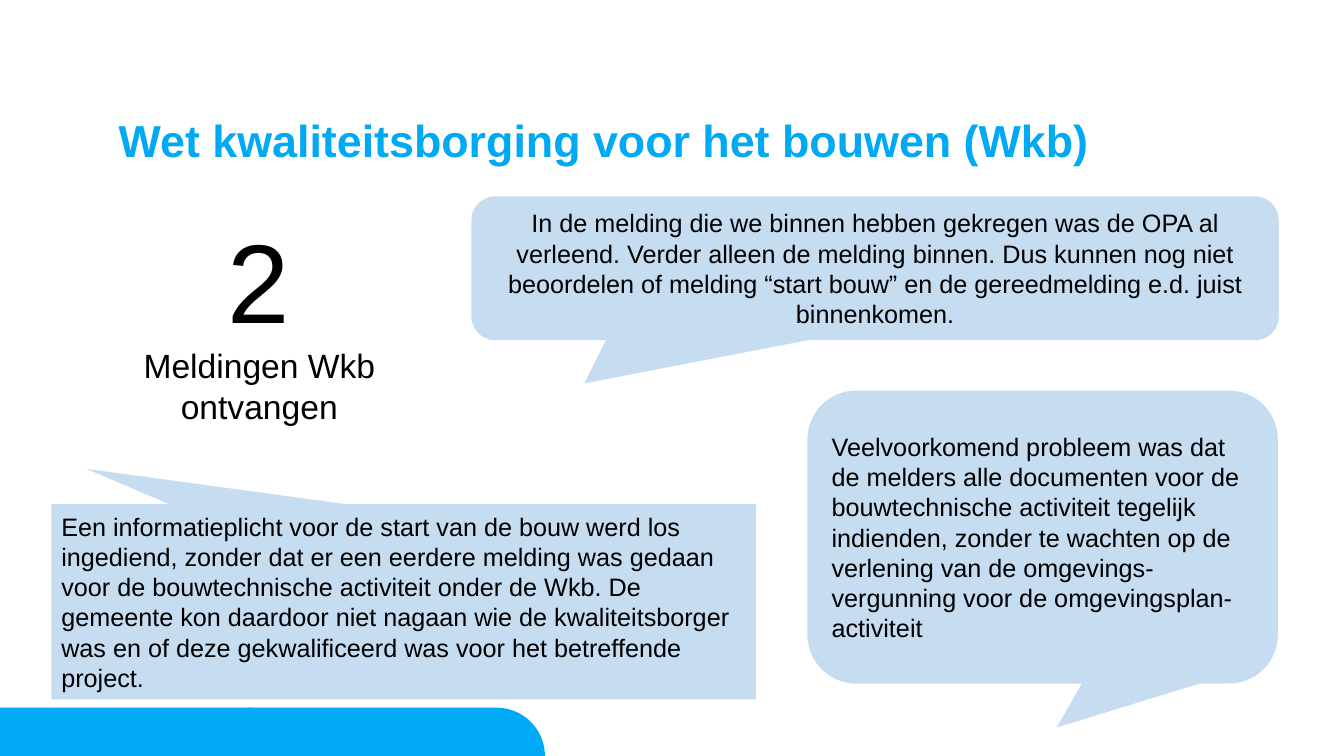
import math
import lxml.etree
import pptx
import pptx.dml.color
import pptx.enum.shapes
import pptx.enum.text
import pptx.oxml.ns
import pptx.util

PX = 9525
KIND = pptx.enum.shapes.MSO_SHAPE
LEFT = pptx.enum.text.PP_ALIGN.LEFT
MID = pptx.enum.text.PP_ALIGN.CENTER
ANCHOR = pptx.enum.text.MSO_ANCHOR


class Theme:
    font = "Arial"
    blue = pptx.dml.color.RGBColor.from_string("00A9F3")
    pale = pptx.dml.color.RGBColor.from_string("8EBAE5")
    ink = pptx.dml.color.RGBColor.from_string("000000")
    alpha = 50
    title = 32
    count = 80
    label = 24
    body = 18


def scale(*box):
    return [round(n * PX) for n in box]


def write(para, text, size, color, align=LEFT, bold=False):
    para.alignment = align
    run = para.add_run()
    run.text = text
    run.font.name = Theme.font
    run.font.size = pptx.util.Pt(size)
    run.font.color.rgb = color
    run.font.bold = bold


def add_foot(slide, box):
    left, top, width, height = box
    arc = []
    for step in range(25):
        turn = math.pi / 2 * step / 24
        arc.append(scale(left + width - height + height * math.sin(turn),
                         top + height - height * math.cos(turn)))
    start = scale(left, top + height)
    path = slide.shapes.build_freeform(*start, scale=1.0)
    path.add_line_segments([scale(left, top), *arc], close=True)
    foot = path.convert_to_shape()
    foot.shadow.inherit = False
    foot.fill.solid()
    foot.fill.fore_color.rgb = Theme.blue
    foot.line.fill.background()


def add_title(slide, box, text):
    title = slide.shapes.title
    title.left, title.top, title.width, title.height = scale(*box)
    frame = title.text_frame
    frame.auto_size = pptx.enum.text.MSO_AUTO_SIZE.NONE
    frame.vertical_anchor = ANCHOR.TOP
    frame.margin_left = frame.margin_right = 0
    frame.margin_top = frame.margin_bottom = 0
    para = frame.paragraphs[0]
    para.line_spacing = 0.9
    write(para, text, Theme.title, Theme.blue, bold=True)


def add_text(slide, box, lines, size, align):
    frame = slide.shapes.add_textbox(*scale(*box)).text_frame
    frame.word_wrap = True
    for i, line in enumerate(lines):
        para = frame.add_paragraph() if i else frame.paragraphs[0]
        write(para, line, size, Theme.ink, align)


def add_count(slide, box, count, lines):
    left, top, width, height = box
    add_text(slide, (left + 158, top, 222, 139), [count], Theme.count, LEFT)
    add_text(slide, (left, top + 127, width, height - 127), lines, Theme.label, MID)


def add_call(slide, box, kind, tip, text, align):
    call = slide.shapes.add_shape(kind, *scale(*box))
    call.shadow.inherit = False
    for i, value in enumerate(tip):
        call.adjustments[i] = value
    call.fill.solid()
    call.fill.fore_color.rgb = Theme.pale
    tint = call.fill._xPr.find(".//" + pptx.oxml.ns.qn("a:srgbClr"))
    lxml.etree.SubElement(tint, pptx.oxml.ns.qn("a:alpha"), val=str(Theme.alpha * 1000))
    call.line.fill.background()
    frame = call.text_frame
    frame.word_wrap = True
    frame.vertical_anchor = ANCHOR.MIDDLE
    write(frame.paragraphs[0], text, Theme.body, Theme.ink, align)


CALLS = [
    ((449, 187, 769, 137), KIND.ROUNDED_RECTANGULAR_CALLOUT, (-0.36, 0.8),
     "In de melding die we binnen hebben gekregen was de OPA al verleend. "
     "Verder alleen de melding binnen. Dus kunnen nog niet beoordelen of melding "
     "“start bouw” en de gereedmelding e.d. juist binnenkomen.", MID),
    ((49, 480, 671, 186), KIND.RECTANGULAR_CALLOUT, (-0.45, -0.68),
     "Een informatieplicht voor de start van de bouw werd los ingediend, zonder "
     "dat er een eerdere melding was gedaan voor de bouwtechnische activiteit "
     "onder de Wkb. De gemeente kon daardoor niet nagaan wie de kwaliteitsborger "
     "was en of deze gekwalificeerd was voor het betreffende project.", LEFT),
    ((769, 372, 448, 279), KIND.ROUNDED_RECTANGULAR_CALLOUT, (0.03, 0.65),
     "Veelvoorkomend probleem was dat de melders alle documenten voor de "
     "bouwtechnische activiteit tegelijk indienden, zonder te wachten op de "
     "verlening van de omgevings-vergunning voor de omgevingsplan-activiteit", LEFT),
]


def main():
    deck = pptx.Presentation()
    deck.slide_width, deck.slide_height = scale(1280, 720)
    slide = deck.slides.add_slide(deck.slide_layouts[5])
    for left in (0, 236):
        add_foot(slide, (left, 674, 283, 46))
    add_title(slide, (113, 113, 1053, 76), "Wet kwaliteitsborging voor het bouwen (Wkb)")
    add_count(slide, (49, 197, 396, 215), "2", ["Meldingen Wkb", "ontvangen"])
    for call in CALLS:
        add_call(slide, *call)
    deck.save("out.pptx")


if __name__ == "__main__":
    main()
